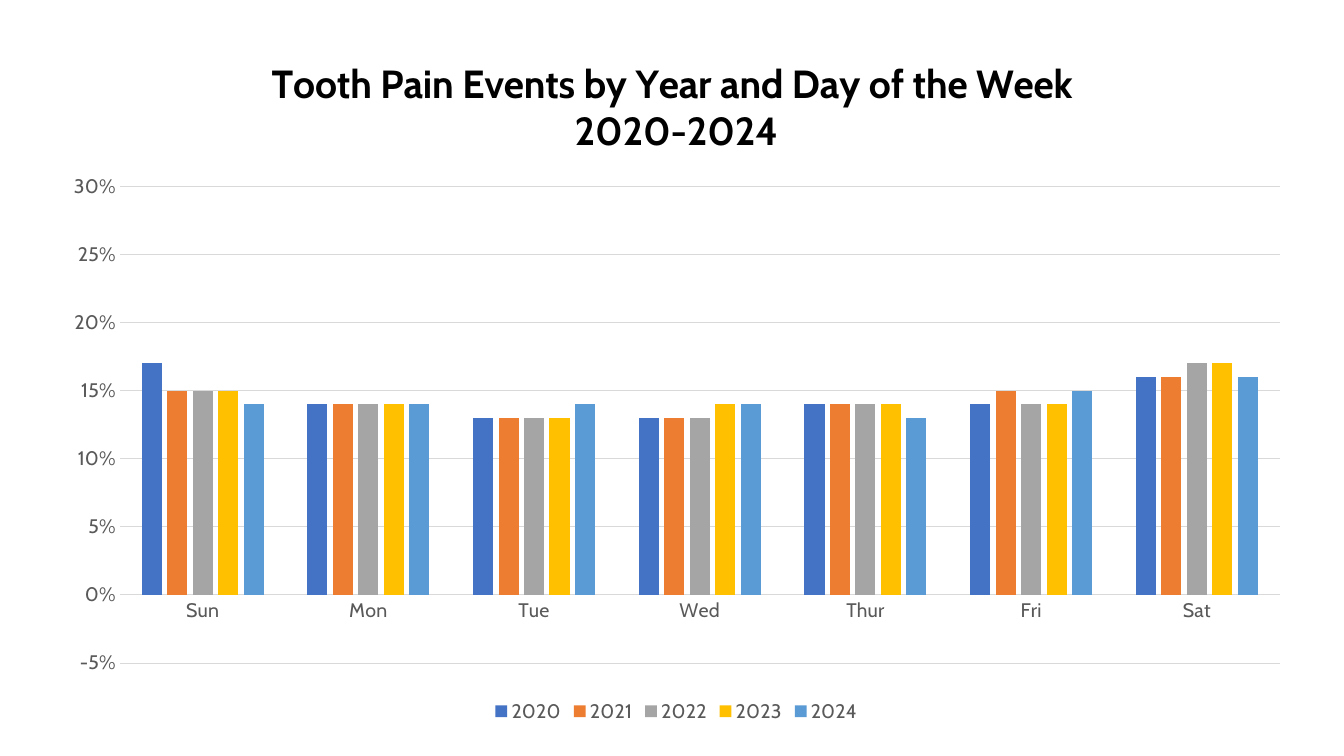
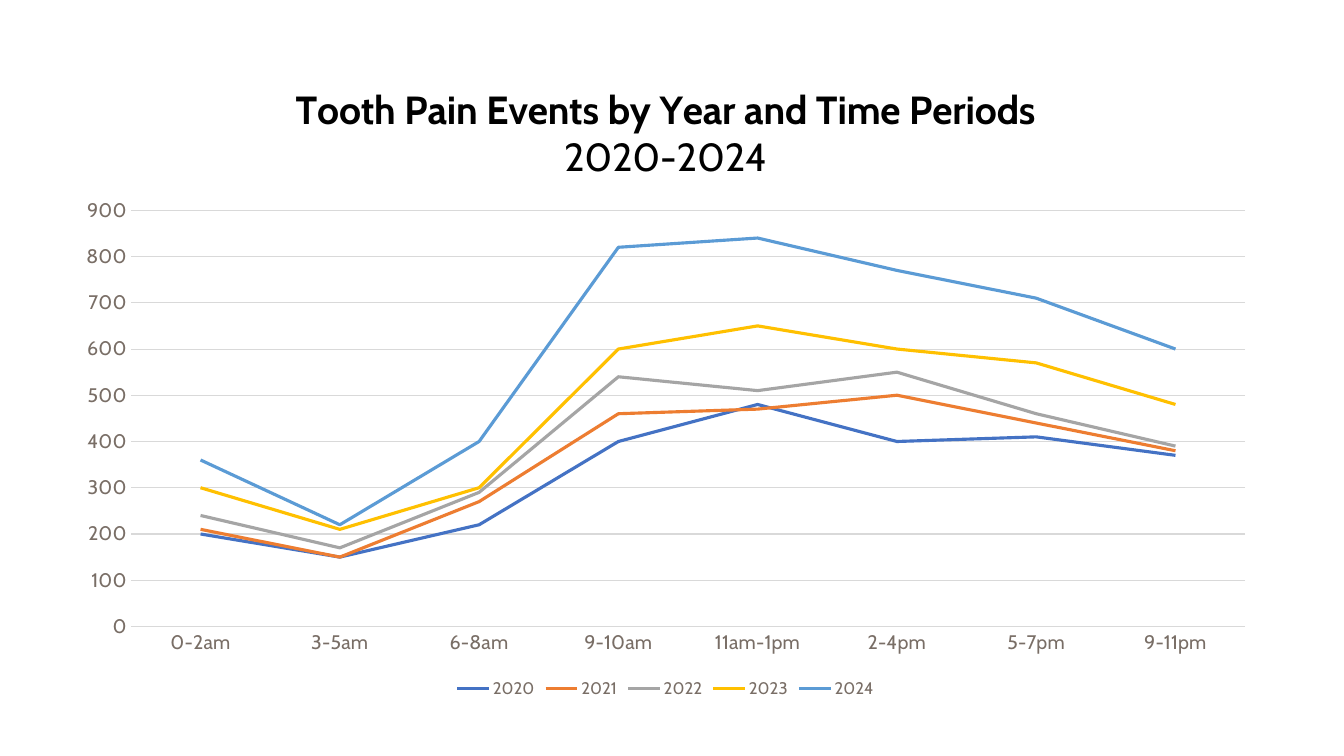
import pptx
import pptx.chart.data
import pptx.dml.color
import pptx.enum.chart
import pptx.oxml
import pptx.oxml.ns
import pptx.util
from pptx.util import Cm, Pt

FACE = "Cabin"
GRID = "D9D9D9"
YEARS = {
    "2020": "4472C4",
    "2021": "ED7D31",
    "2022": "A5A5A5",
    "2023": "FFC000",
    "2024": "5B9BD5",
}
KINDS = pptx.enum.chart.XL_CHART_TYPE


def paint(part, color):
    """Give a fill, line or font one solid colour."""
    if hasattr(part, "solid"):
        part.solid()
        part.fore_color.rgb = pptx.dml.color.RGBColor.from_string(color)
    else:
        part.color.rgb = pptx.dml.color.RGBColor.from_string(color)


def style(font, size, color, bold=False):
    font.name = FACE
    font.size = Pt(size)
    font.bold = bold
    paint(font, color)


# Boxes are left, top, width and height in cm; plots lie inside their box.
charts = [
    {
        "kind": KINDS.COLUMN_CLUSTERED,
        "box": (1.22, 0.91, 31.65, 17.42),
        "plot": (1.8, 3.79, 29.23, 12.01),
        "title": "Tooth Pain Events by Year and Day of the Week ",
        "bold": True,
        "text": "595959",
        "key": 14,
        "scale": (-0.05, 0.3, 0.05),
        "format": "0%",
        "cats": ["Sun", "Mon", "Tue", "Wed", "Thur", "Fri", "Sat"],
        "rows": [
            (0.17, 0.14, 0.13, 0.13, 0.14, 0.14, 0.16),
            (0.15, 0.14, 0.13, 0.13, 0.14, 0.15, 0.16),
            (0.15, 0.14, 0.13, 0.13, 0.14, 0.14, 0.17),
            (0.15, 0.14, 0.13, 0.14, 0.14, 0.14, 0.17),
            (0.14, 0.14, 0.14, 0.14, 0.13, 0.15, 0.16),
        ],
    },
    {
        "kind": KINDS.LINE,
        "box": (1.57, 1.6, 30.4, 16.1),
        "plot": (1.73, 3.7, 28.08, 10.49),
        "title": "Tooth Pain Events by Year and Time Periods",
        "bold": False,
        "text": "796E66",
        "key": 12,
        "scale": (0, 900, 100),
        "format": "###0",
        "cats": ["0-2am", "3-5am", "6-8am", "9-10am",
                 "11am-1pm", "2-4pm", "5-7pm", "9-11pm"],
        "rows": [
            (200, 150, 220, 400, 480, 400, 410, 370),
            (210, 150, 270, 460, 470, 500, 440, 380),
            (240, 170, 290, 540, 510, 550, 460, 390),
            (300, 210, 300, 600, 650, 600, 570, 480),
            (360, 220, 400, 820, 840, 770, 710, 600),
        ],
    },
]

deck = pptx.Presentation()
deck.slide_width = Cm(33.87)
deck.slide_height = Cm(19.05)

for item in charts:
    slide = deck.slides.add_slide(deck.slide_layouts[6])
    data = pptx.chart.data.CategoryChartData(number_format=item["format"])
    data.categories = item["cats"]
    for year, row in zip(YEARS, item["rows"]):
        data.add_series(year, row)
    box = [Cm(side) for side in item["box"]]
    chart = slide.shapes.add_chart(item["kind"], *box, data).chart
    style(chart.font, 10, "000000")

    # Title
    chart.has_title = True
    frame = chart.chart_title.text_frame
    frame.text = item["title"] + "\n2020-2024"
    for line, bold in zip(frame.paragraphs, (True, item["bold"])):
        style(line.font, 28, "000000", bold)
        for run in line.runs:
            style(run.font, 28, "000000", bold)

    # Legend
    chart.has_legend = True
    chart.legend.position = pptx.enum.chart.XL_LEGEND_POSITION.BOTTOM
    chart.legend.include_in_layout = False
    style(chart.legend.font, item["key"], item["text"])

    # Axes
    across, up = chart.category_axis, chart.value_axis
    for axis in (across, up):
        axis.major_tick_mark = pptx.enum.chart.XL_TICK_MARK.NONE
        axis.minor_tick_mark = pptx.enum.chart.XL_TICK_MARK.NONE
        style(axis.tick_labels.font, 14, item["text"])
    up.minimum_scale, up.maximum_scale, up.major_unit = item["scale"]
    up.tick_labels.number_format = item["format"]
    up.tick_labels.number_format_is_linked = False
    up.format.line.fill.background()
    up.has_major_gridlines = True
    for rule in (across.format.line, up.major_gridlines.format.line):
        paint(rule, GRID)
        rule.width = Pt(0.75)

    # Series
    plot = chart.plots[0]
    plot.vary_by_categories = False
    columns = item["kind"] == KINDS.COLUMN_CLUSTERED
    if columns:
        plot.gap_width = 219
        plot.overlap = -27
    for series, color in zip(plot.series, YEARS.values()):
        if columns:
            paint(series.format.fill, color)
        else:
            paint(series.format.line, color)
            series.format.line.width = Pt(2.25)
            series.smooth = False

    # Plot area
    area = plot._element.getparent()
    for old in area.findall(pptx.oxml.ns.qn("c:layout")):
        area.remove(old)
    wide, high = item["box"][2:]
    sides = "".join(
        f'<c:{name} val="{part / whole}"/>'
        for name, part, whole in zip("xywh", item["plot"],
                                     (wide, high, wide, high)))
    area.insert(0, pptx.oxml.parse_xml(
        f'<c:layout {pptx.oxml.ns.nsdecls("c")}><c:manualLayout>'
        '<c:layoutTarget val="inner"/>'
        '<c:xMode val="edge"/><c:yMode val="edge"/>'
        f'{sides}</c:manualLayout></c:layout>'))

deck.save("out.pptx")
